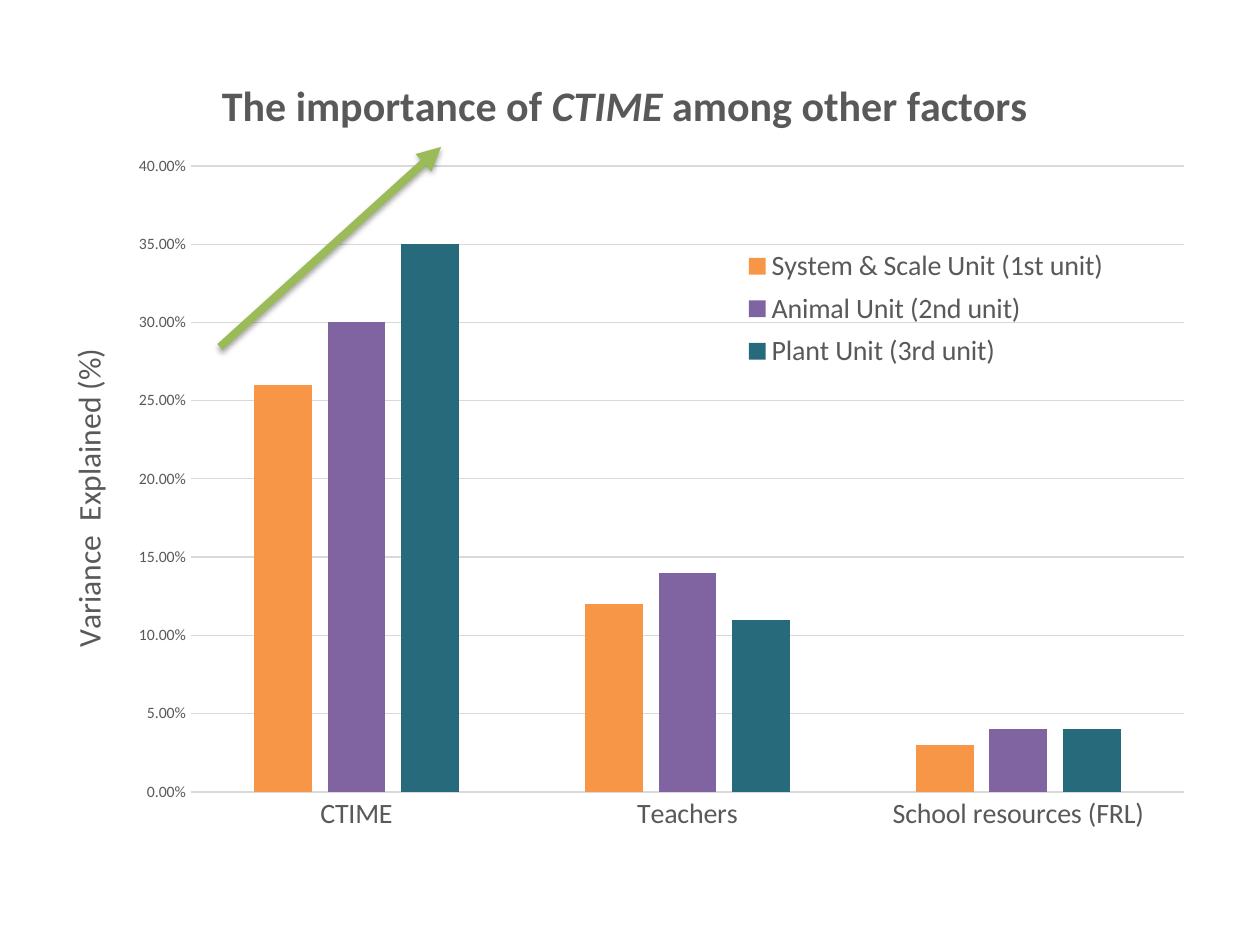
from dataclasses import dataclass

from lxml import etree
from pptx import Presentation
from pptx.chart.data import CategoryChartData
from pptx.dml.color import RGBColor
from pptx.enum.chart import XL_CHART_TYPE, XL_LEGEND_POSITION, XL_TICK_MARK
from pptx.enum.shapes import MSO_CONNECTOR
from pptx.oxml import parse_xml
from pptx.oxml.ns import nsdecls, qn
from pptx.util import Pt

COLUMNS = XL_CHART_TYPE.COLUMN_CLUSTERED
BOTTOM = XL_LEGEND_POSITION.BOTTOM
NO_TICK = XL_TICK_MARK.NONE
STRAIGHT = MSO_CONNECTOR.STRAIGHT
BLANK = 6
EMU = 914400 / 126


@dataclass(frozen=True)
class Theme:
    font: str = "Calibri"
    text: str = "595959"
    grid: str = "D9D9D9"
    arrow: str = "9BBB59"
    bars: tuple = ("F79646", "8064A2", "276A7C")
    title: int = 24
    axis: int = 18
    label: int = 16
    tick: int = 9


THEME = Theme()
FRAME = (42, 53, 1166, 850)
FACTORS = ("CTIME", "Teachers", "School resources (FRL)")
UNITS = {
    "System & Scale Unit (1st unit)": (0.26, 0.12, 0.03),
    "Animal Unit (2nd unit)": (0.3, 0.14, 0.04),
    "Plant Unit (3rd unit)": (0.35, 0.11, 0.04),
}


def px(n):
    return round(n * EMU)


def rgb(code):
    return RGBColor.from_string(code)


def style(font, size, bold=False, italic=False):
    font.name = THEME.font
    font.size = Pt(size)
    font.bold = bold
    font.italic = italic
    font.color.rgb = rgb(THEME.text)


def rule(line):
    line.color.rgb = rgb(THEME.grid)
    line.width = Pt(0.75)


def place(part, left, top, wide=None, high=None, inner=False):
    """Pin a chart part at slide pixels, as fractions of the chart frame."""
    for old in part.findall(qn("c:layout")):
        part.remove(old)
    box = etree.Element(qn("c:layout"))
    manual = etree.SubElement(box, qn("c:manualLayout"))

    def put(tag, val):
        etree.SubElement(manual, qn("c:" + tag)).set("val", str(val))

    if inner:
        put("layoutTarget", "inner")
    put("xMode", "edge")
    put("yMode", "edge")
    put("x", (left - FRAME[0]) / FRAME[2])
    put("y", (top - FRAME[1]) / FRAME[3])
    if wide:
        put("w", wide / FRAME[2])
        put("h", high / FRAME[3])
    over = part.find(qn("c:overlay"))
    if over is None:
        part.insert(0, box)
    else:
        over.addprevious(box)


def write(frame, runs, size, bold=False):
    para = frame.paragraphs[0]
    style(para.font, size, bold)
    for text, italic in runs:
        run = para.add_run()
        run.text = text
        style(run.font, size, bold, italic)


def add_bars(slide):
    data = CategoryChartData(number_format="0.00%")
    data.categories = FACTORS
    for name, vals in UNITS.items():
        data.add_series(name, vals)
    chart = slide.shapes.add_chart(COLUMNS, *map(px, FRAME), data).chart
    style(chart.font, 10)
    plot = chart.plots[0]
    plot.gap_width = 219
    plot.overlap = -27
    plot.vary_by_categories = False
    for series, color in zip(plot.series, THEME.bars):
        series.format.fill.solid()
        series.format.fill.fore_color.rgb = rgb(color)
        series.format.line.fill.background()
    area = chart._chartSpace.find(".//" + qn("c:plotArea"))
    place(area, 191, 166, 993, 626, inner=True)
    return chart


def set_axes(chart):
    cat, val = chart.category_axis, chart.value_axis
    for axis, size in ((cat, THEME.label), (val, THEME.tick)):
        axis.major_tick_mark = NO_TICK
        axis.minor_tick_mark = NO_TICK
        style(axis.tick_labels.font, size)
    rule(cat.format.line)
    val.format.line.fill.background()
    val.minimum_scale, val.maximum_scale = 0, 0.4
    val.major_unit = 0.05
    val.has_major_gridlines = True
    rule(val.major_gridlines.format.line)
    val.tick_labels.number_format = "0.00%"
    val.tick_labels.number_format_is_linked = False
    title = val.axis_title
    write(title.text_frame, [("Variance  Explained (%)", False)], THEME.axis)
    body = title._element.find(".//" + qn("a:bodyPr"))
    body.set("rot", "-5400000")
    body.set("vert", "horz")
    place(title._element, 61, 343)


def set_title(chart):
    chart.has_title = True
    title = chart.chart_title
    title.include_in_layout = False
    runs = [("The importance of ", False), ("CTIME", True),
            (" among other factors", False)]
    write(title.text_frame, runs, THEME.title, bold=True)
    place(title._element, 218, 76)


def set_legend(chart):
    chart.has_legend = True
    legend = chart.legend
    legend.position = BOTTOM
    legend.include_in_layout = False
    style(legend.font, THEME.label)
    place(legend._element, 736, 241, 380, 136)


def add_arrow(slide, start, end):
    arrow = slide.shapes.add_connector(STRAIGHT, *map(px, start + end))
    arrow.line.color.rgb = rgb(THEME.arrow)
    arrow.line.width = Pt(4.5)
    props = arrow._element.spPr
    tip = etree.SubElement(props.find(qn("a:ln")), qn("a:tailEnd"))
    tip.set("type", "triangle")
    props.append(parse_xml(
        f'<a:effectLst {nsdecls("a")}>'
        f'<a:outerShdw blurRad="{Pt(3.1)}" dist="{Pt(1.8)}" dir="5400000" '
        'rotWithShape="0"><a:srgbClr val="000000"><a:alpha val="35000"/>'
        '</a:srgbClr></a:outerShdw></a:effectLst>'))


def main():
    deck = Presentation()
    deck.slide_width, deck.slide_height = px(1260), px(945)
    slide = deck.slides.add_slide(deck.slide_layouts[BLANK])
    chart = add_bars(slide)
    set_axes(chart)
    set_title(chart)
    set_legend(chart)
    add_arrow(slide, (220, 347), (441, 147))
    deck.save("out.pptx")


if __name__ == "__main__":
    main()
